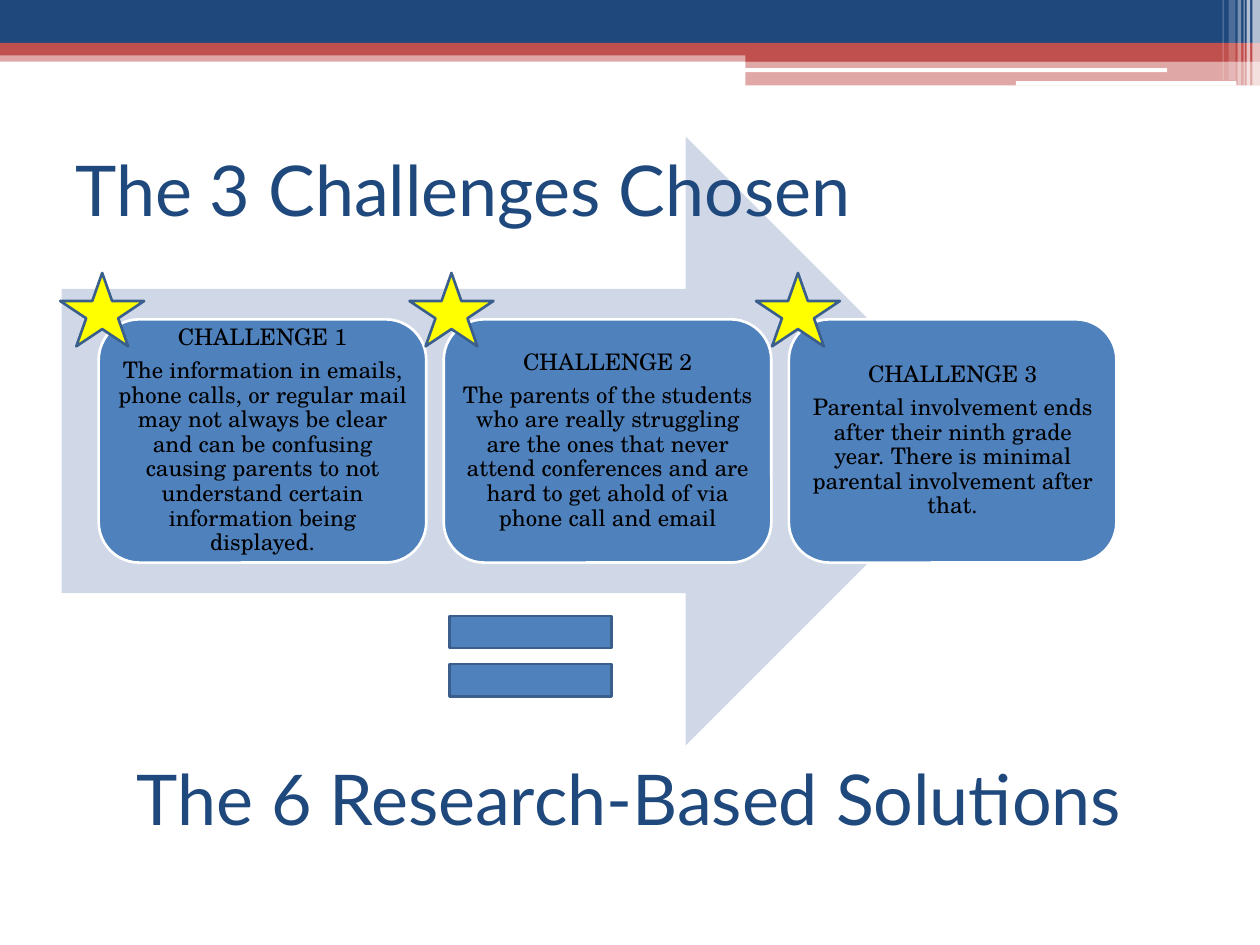
from lxml.etree import SubElement
from pptx import Presentation
from pptx.dml.color import RGBColor
from pptx.enum.shapes import MSO_SHAPE as Shape
from pptx.enum.text import MSO_ANCHOR as Anchor, PP_ALIGN as Align
from pptx.oxml.ns import qn
from pptx.util import Pt

COLORS = {
    "navy": "1F497D", "red": "C0504D", "white": "FFFFFF", "black": "000000",
    "arrow": "D0D8E8", "blue": "4F81BD", "edge": "3A5F8C", "star": "FFFF00",
}

# left, top, width, height, color, opacity in percent
BANDS = [
    (0, 28.8, 720, 6.5, "red", 50),
    (0, 0, 720, 24.5, "navy", 100),
    (0, 24.5, 720, 7.2, "red", 100),
    (426, 28, 294, 7.2, "red", 100),
    (426, 34.9, 294, 14, "red", 50),
]
WHITE_BARS = [(425.5, 39, 241.5, 2.2), (580.5, 46.4, 126, 2.6)]
# left, width, height, opacity in percent
STRIPES = [
    (715.6, 4.4, 49, 65), (712.4, 2, 49, 65), (710.6, 0.7, 49, 60),
    (707.2, 2, 49, 40), (702, 4, 46, 20), (698.6, 0.7, 46, 30),
]

CHALLENGES = [
    "The information in emails, phone calls, or regular mail may not always be "
    "clear and can be confusing causing parents to not understand certain "
    "information being displayed.",
    "The parents of the students who are really struggling are the ones that "
    "never attend conferences and are hard to get ahold of via phone call and email",
    "Parental involvement ends after their ninth grade year. There is minimal "
    "parental involvement after that.",
]
CARD_LEFT, CARD_STEP = 56.4, 197.2
STAR_LEFTS = [34.4, 234, 432]


def rgb(name):
    return RGBColor.from_string(COLORS[name])


def add_shape(page, kind, left, top, width, height, fill, line=None, opacity=100):
    shape = page.shapes.add_shape(kind, Pt(left), Pt(top), Pt(width), Pt(height))
    shape.shadow.inherit = False
    shape.fill.solid()
    shape.fill.fore_color.rgb = rgb(fill)
    if opacity < 100:
        color = shape.fill._xPr.find(qn("a:solidFill"))[0]
        SubElement(color, qn("a:alpha"), val=str(opacity * 1000))
    if line:
        shape.line.color.rgb = rgb(line)
        shape.line.width = Pt(1.5)
    else:
        shape.line.fill.background()
    return shape


def write(frame, *texts, font, size, color, align=Align.LEFT, inset=None,
          spacing=None, after=None):
    """Fill a text frame with one paragraph per text."""
    frame.word_wrap = True
    frame.vertical_anchor = Anchor.MIDDLE
    if inset is not None:
        frame.margin_left = frame.margin_right = Pt(inset)
        frame.margin_top = frame.margin_bottom = Pt(inset)
    for index, text in enumerate(texts):
        para = frame.add_paragraph() if index else frame.paragraphs[0]
        para.alignment = align
        if spacing:
            para.line_spacing = spacing
        if after:
            para.space_after = Pt(after)
        span = para.add_run()
        span.text = text
        span.font.name = font
        span.font.size = Pt(size)
        span.font.color.rgb = rgb(color)


def add_heading(page, text, left, top, width):
    box = page.shapes.add_textbox(Pt(left), Pt(top), Pt(width), Pt(84))
    write(box.text_frame, text, font="Lato", size=40, color="navy")


def add_header(page):
    for *place, color, opacity in BANDS:
        add_shape(page, Shape.RECTANGLE, *place, color, opacity=opacity)
    for place in WHITE_BARS:
        add_shape(page, Shape.ROUNDED_RECTANGLE, *place, "white")
    for left, width, height, opacity in STRIPES:
        add_shape(page, Shape.RECTANGLE, left, 0, width, height, "white",
                  opacity=opacity)


def add_card(page, number, text):
    left = CARD_LEFT + (number - 1) * CARD_STEP
    card = add_shape(page, Shape.ROUNDED_RECTANGLE, left, 182.5, 187.2, 139,
                     "blue", line="white")
    write(card.text_frame, f"CHALLENGE {number}", text, font="TeX Gyre Schola",
          size=13, color="black", align=Align.CENTER, inset=3.6, spacing=0.9,
          after=4.55)


def main():
    deck = Presentation()
    deck.slide_width, deck.slide_height = Pt(720), Pt(540)
    page = deck.slides.add_slide(deck.slide_layouts[6])
    add_header(page)
    add_heading(page, "The 6 Research-Based Solutions", 71, 414, 648)
    add_shape(page, Shape.RIGHT_ARROW, 35.3, 78, 530.6, 348, "arrow")
    for number, text in enumerate(CHALLENGES, 1):
        add_card(page, number, text)
    add_shape(page, Shape.MATH_EQUAL, 240, 336, 126, 78, "blue", line="edge")
    add_heading(page, "The 3 Challenges Chosen", 36, 66, 606)
    for left in STAR_LEFTS:
        add_shape(page, Shape.STAR_5_POINT, left, 156, 48, 42, "star", line="edge")
    deck.save("out.pptx")


if __name__ == "__main__":
    main()
